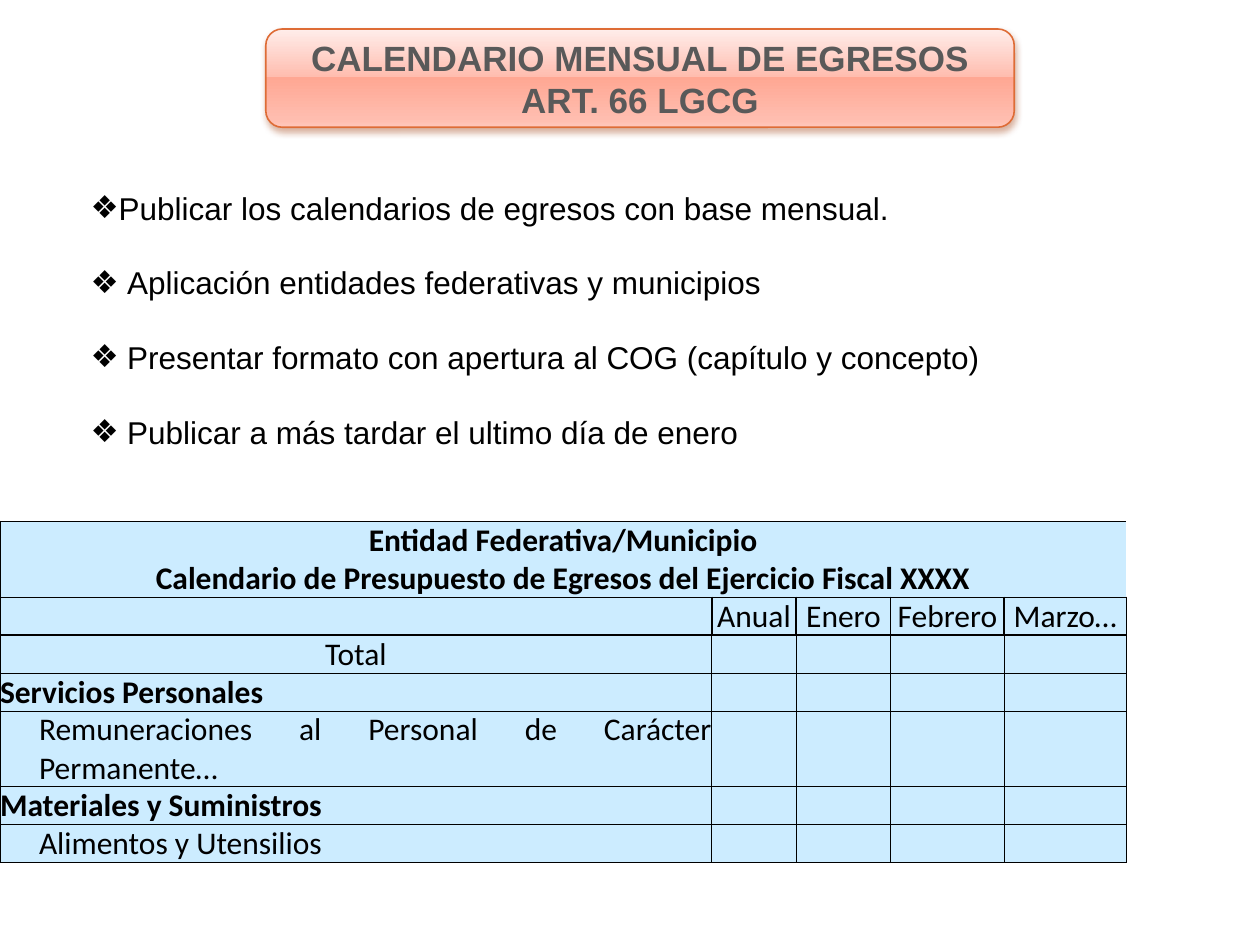
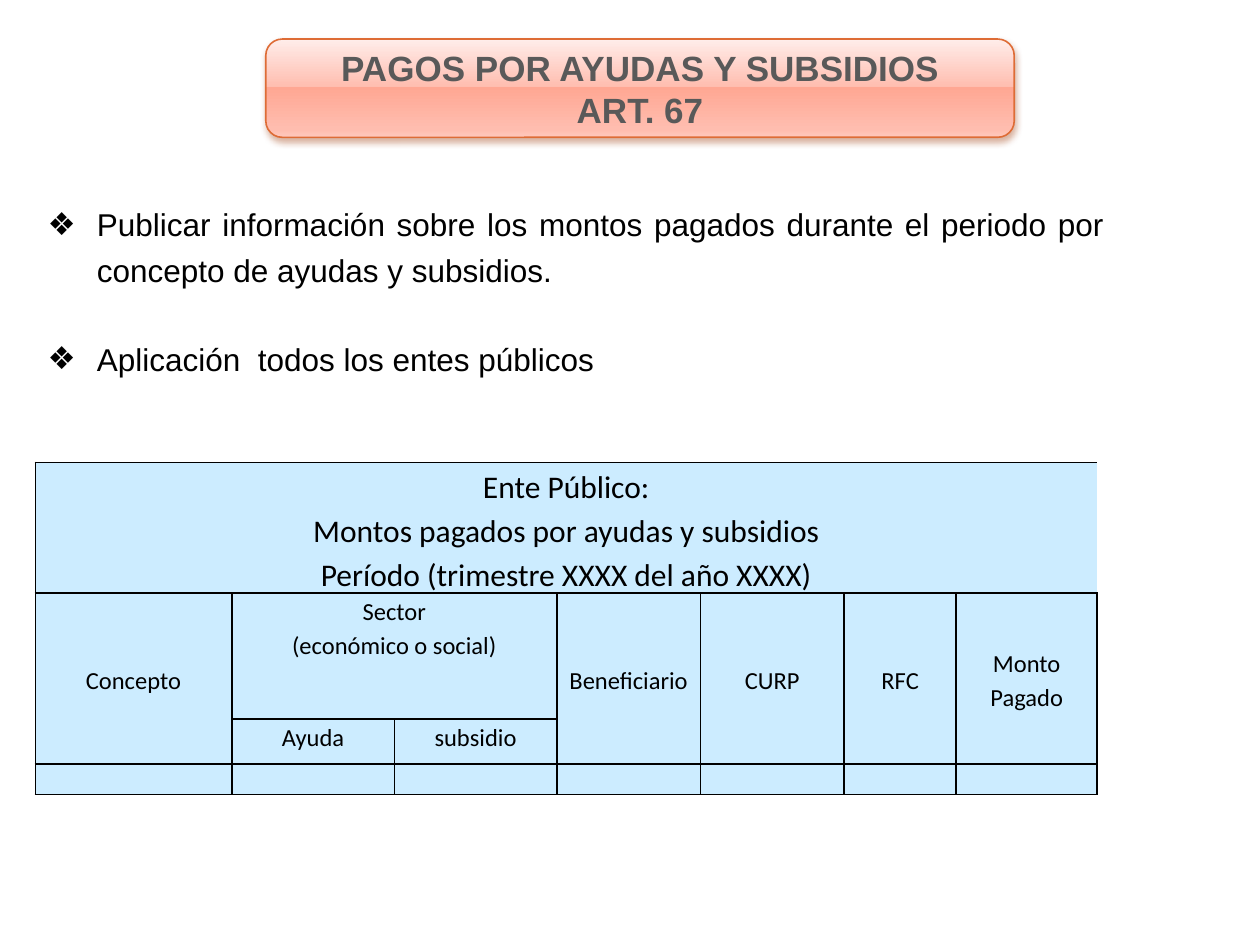
import pptx
import pptx.util
import pptx.dml.color
import pptx.enum.shapes
import pptx.enum.text
import pptx.oxml
import pptx.oxml.ns
from dataclasses import dataclass
from lxml import etree

Pt = pptx.util.Pt
RGB = pptx.dml.color.RGBColor.from_string
qn = pptx.oxml.ns.qn
NS = pptx.oxml.ns.nsdecls("a")
ALIGN = pptx.enum.text.PP_ALIGN
ANCHOR = pptx.enum.text.MSO_ANCHOR
LEFT, MID, JUST = ALIGN.LEFT, ALIGN.CENTER, ALIGN.JUSTIFY


@dataclass
class Theme:
    ink: str = "000000"
    title: str = "595959"
    edge: str = "DE6C36"
    glow: str = "9C3707"
    cell: str = "CCECFF"
    band: tuple = ((0, "FFEDEA"), (49, "FFBDAF"), (49, "FFA793"),
                   (92, "FFBDAF"), (100, "FFC8BC"))
    head: str = "Arial"
    grid: str = "Calibri"
    big: int = 20
    text: int = 18
    small: int = 14
    thin: float = 0.5
    thick: float = 1


theme = Theme()
prs = pptx.Presentation()
prs.slide_width = pptx.util.Inches(10)
prs.slide_height = pptx.util.Inches(7.5)
U = prs.slide_width // 100  # the slide is a grid of 100 columns by 75 rows


def write(frame, text, size, face, ink, bold=False, align=MID, pace=None):
    """Set the text of a frame, one paragraph a line, and format it."""
    frame.word_wrap = True
    frame.text = text
    for para in frame.paragraphs:
        para.alignment = align
        para.line_spacing = pace
        for run in para.runs:
            run.font.size, run.font.name = Pt(size), face
            run.font.bold = bold
            run.font.color.rgb = RGB(ink)
        if not para.runs:
            etree.SubElement(para._p, qn("a:endParaRPr"), sz=str(size * 100))


def block(table, row, col, rows=1, cols=1, text="", size=theme.text, bold=False,
          align=MID, anchor=ANCHOR.TOP, inset=0, pace=None, sides=None):
    """Write a cell, merged over rows and cols, ruled only on its outer sides."""
    sides = sides or {}
    for r in range(row, row + rows):
        for c in range(col, col + cols):
            cell = table.cell(r, c)
            props = cell._tc.get_or_add_tcPr()
            outer = {"L": c == col, "R": c == col + cols - 1,
                     "T": r == row, "B": r == row + rows - 1}
            for side, edge in outer.items():
                if edge and side in sides:
                    props.append(pptx.oxml.parse_xml(
                        f'<a:ln{side} {NS} w="{int(Pt(sides[side]))}"><a:solidFill>'
                        f'<a:srgbClr val="{theme.ink}"/></a:solidFill></a:ln{side}>'))
            cell.fill.solid()
            cell.fill.fore_color.rgb = RGB(theme.cell)
            cell.margin_left = cell.margin_right = int(inset * U)
            cell.margin_top = cell.margin_bottom = 0
            cell.vertical_anchor = anchor
            write(cell.text_frame, text if (r, c) == (row, col) else "",
                  size, theme.grid, theme.ink, bold, align, pace)
    if rows * cols > 1:
        table.cell(row, col).merge(table.cell(row + rows - 1, col + cols - 1))


# Each page: title, its top, list box, list indents, list pacing, list lines,
# table corner, column widths, row heights (all lengths in grid units)
pages = [
    dict(title="CALENDARIO MENSUAL DE EGRESOS\nART. 66 LGCG", top=2.3,
         box=(6.2, 14.5, 87.5, 22.2), dents=(0, 2.9, 2.9, 2.9), pace=None, gap=21,
         lines=("Publicar los calendarios de egresos con base mensual.",
                "Aplicación entidades federativas y municipios",
                "Presentar formato con apertura al COG (capítulo y concepto)",
                "Publicar a más tardar el ultimo día de enero"),
         at=(0, 41.4), wide=(3.1, 53.4, 6.7, 7.5, 9, 9.7),
         high=(3, 3, 3, 3, 3, 6, 3, 3)),
    dict(title="PAGOS POR AYUDAS Y SUBSIDIOS\nART. 67", top=3.1,
         box=(2.8, 15.2, 85.8, 19.2), dents=(3.9, 3.9), pace=1.2, gap=25,
         lines=("Publicar información sobre los montos pagados durante el periodo "
                "por concepto de ayudas y subsidios.",
                "Aplicación  todos los entes públicos"),
         at=(2.8, 36.7), wide=(15.6, 12.9, 12.9, 11.4, 11.4, 8.9, 11.2),
         high=(10.3, 10, 3.6, 2.4)),
]

stops = "".join(f'<a:gs pos="{pos * 1000}"><a:srgbClr val="{tint}"/></a:gs>'
                for pos, tint in theme.band)
tables = []
for page in pages:
    slide = prs.slides.add_slide(prs.slide_layouts[6])

    band = slide.shapes.add_shape(
        pptx.enum.shapes.MSO_SHAPE.ROUNDED_RECTANGLE,
        int(21.1 * U), int(page["top"] * U), int(59.4 * U), int(7.8 * U))
    band.line.color.rgb = RGB(theme.edge)
    band.line.width = Pt(0.9)
    band.shadow.inherit = False
    props = band._element.spPr
    props.find(qn("a:prstGeom")).addnext(pptx.oxml.parse_xml(
        f'<a:gradFill {NS} rotWithShape="1"><a:gsLst>{stops}</a:gsLst>'
        '<a:lin ang="5400000" scaled="0"/></a:gradFill>'))
    props.find(qn("a:effectLst")).append(pptx.oxml.parse_xml(
        f'<a:outerShdw {NS} blurRad="{int(Pt(4))}" dist="{int(Pt(2))}" dir="5400000" '
        f'rotWithShape="0"><a:srgbClr val="{theme.glow}"><a:alpha val="38000"/>'
        '</a:srgbClr></a:outerShdw>'))
    band.text_frame.vertical_anchor = ANCHOR.MIDDLE
    write(band.text_frame, page["title"], theme.big, theme.head, theme.title, True)

    notes = slide.shapes.add_textbox(*(int(n * U) for n in page["box"])).text_frame
    write(notes, "\n".join(page["lines"]), theme.text, theme.head, theme.ink,
          align=JUST, pace=page["pace"])
    for num, (para, dent) in enumerate(zip(notes.paragraphs, page["dents"])):
        if num:
            para.space_before = Pt(page["gap"])
        props = para._p.get_or_add_pPr()
        props.set("marL", str(int(dent * U)))
        props.set("indent", str(-int(dent * U)))
        etree.SubElement(props, qn("a:buFont"), typeface=theme.head)
        etree.SubElement(props, qn("a:buChar"), char="❖")

    wide, high = page["wide"], page["high"]
    table = slide.shapes.add_table(
        len(high), len(wide), *(int(n * U) for n in page["at"]),
        int(sum(wide) * U), int(sum(high) * U)).table
    table.first_row = table.horz_banding = False
    style = table._tbl.tblPr.find(qn("a:tableStyleId"))
    style.text = "{2D5ABB26-0587-4C30-8999-92F81FD0307C}"  # no style, no grid
    for col, size in zip(table.columns, wide):
        col.width = int(size * U)
    for row, size in zip(table.rows, high):
        row.height = int(size * U)
    tables.append(table)

budget, aid = tables
thin = dict.fromkeys("LRTB", theme.thin)
thick = dict.fromkeys("LRTB", theme.thick)

# Monthly budget: two title rows, a row of months, then chapters and concepts
block(budget, 0, 0, cols=6, text="Entidad Federativa/Municipio", bold=True,
      anchor=ANCHOR.BOTTOM, sides={"L": theme.thick, "T": theme.thick})
block(budget, 1, 0, cols=6, bold=True, anchor=ANCHOR.BOTTOM,
      text="Calendario de Presupuesto de Egresos del Ejercicio Fiscal XXXX",
      sides={"L": theme.thick, "B": theme.thick})
block(budget, 2, 0, cols=2, sides=thick)
for col, month in enumerate(("Anual", "Enero", "Febrero", "Marzo…"), 2):
    block(budget, 2, col, text=month, anchor=ANCHOR.BOTTOM, sides=thick)
    for row in range(3, 8):
        top = theme.thick if row == 3 else theme.thin
        block(budget, row, col, sides=thin | {"T": top})
edge = thin | {"L": theme.thick}
block(budget, 3, 0, cols=2, text="Total", sides=edge | {"T": theme.thick})
for row, name in ((4, "Servicios Personales"), (6, "Materiales y Suministros")):
    block(budget, row, 0, cols=2, text=name, bold=True, align=LEFT, sides=edge)
for row, name in ((5, "Remuneraciones al Personal de Carácter Permanente…"),
                  (7, "Alimentos y Utensilios")):
    block(budget, row, 0, sides={"L": theme.thick, "T": theme.thin, "B": theme.thin})
    block(budget, row, 1, text=name, align=JUST,
          sides={"R": theme.thin, "T": theme.thin, "B": theme.thin})

# Aid and subsidies: a title row, two levels of headings and an empty row
look = dict(inset=0.4, pace=1.15, sides=thick)
block(aid, 0, 0, cols=7, **look,
      text="Ente Público:\nMontos pagados por ayudas y subsidios\n"
           "Período (trimestre XXXX del año XXXX)")
look["size"] = theme.small
for col, name in ((0, "Concepto"), (3, "Beneficiario"), (4, "CURP"), (5, "RFC"),
                  (6, "Monto Pagado")):
    block(aid, 1, col, rows=2, text=name, anchor=ANCHOR.MIDDLE, **look)
block(aid, 1, 1, cols=2, text="Sector\n(económico o social)", **look)
for col, name in ((1, "Ayuda"), (2, "subsidio")):
    block(aid, 2, col, text=name, **look)
for col in range(7):
    block(aid, 3, col, size=theme.small, sides=thick)

prs.save("out.pptx")
